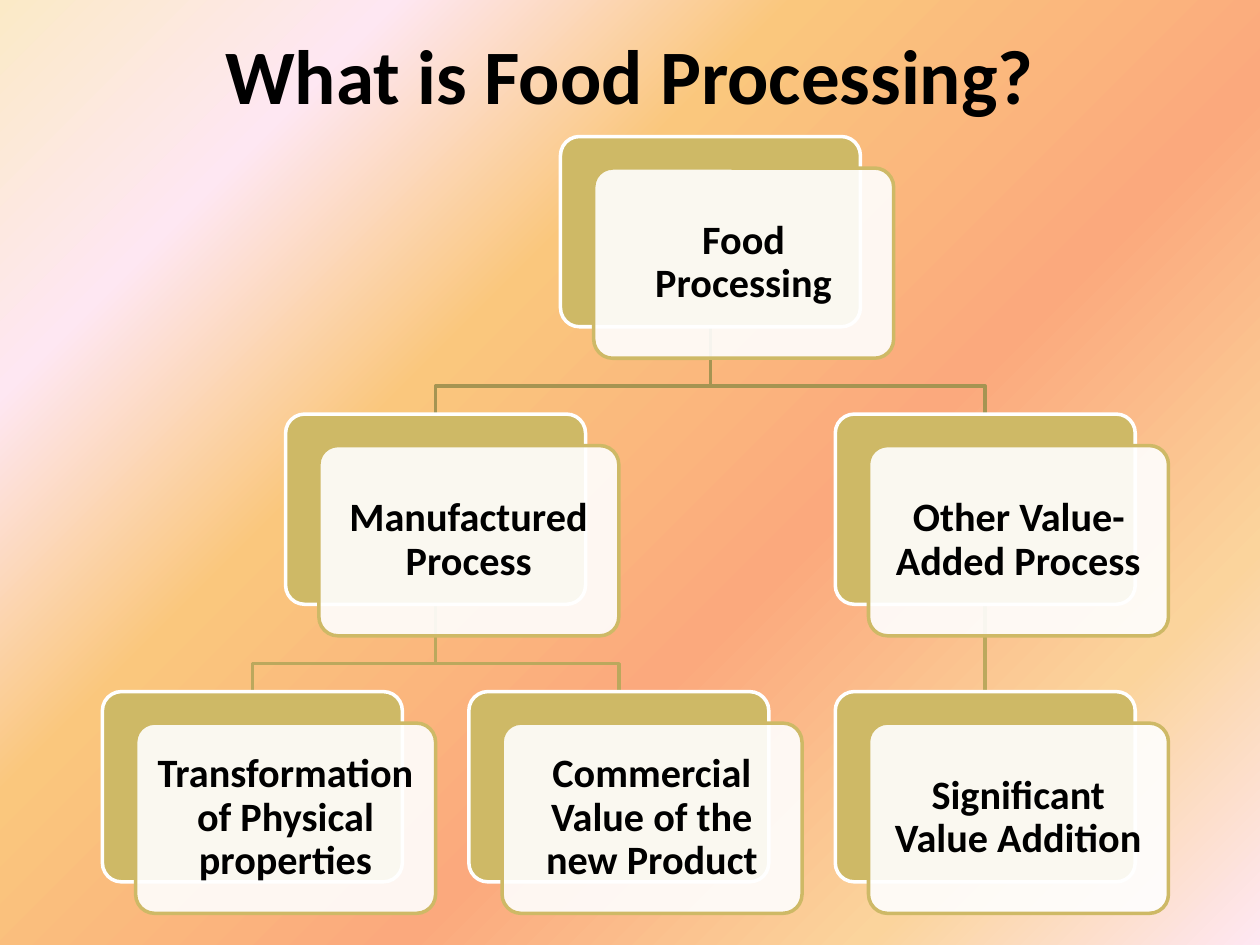
from lxml.etree import SubElement
from pptx import Presentation
from pptx.dml.color import RGBColor
from pptx.enum.shapes import MSO_CONNECTOR, MSO_SHAPE
from pptx.enum.text import MSO_ANCHOR, PP_ALIGN
from pptx.oxml import parse_xml
from pptx.oxml.ns import nsdecls, qn
from pptx.util import Pt

STOPS = [(0, "FBEAC7"), (18, "FEE7F2"), (36, "FAC77D"),
         (61, "FBA97D"), (82, "FBD49C"), (100, "FEE7F2")]
GOLD, WHITE, BLACK = "CEB966", "FFFFFF", "000000"
DARK, MID = "A59452", "BBA85D"

# Chart grid: card size, step between columns and rows, front card offset
WIDE, HIGH = 171.4, 108.7
COL, ROW = 209.4, 158.6
SHIFT = (19, 18)
BEND = 34  # drop from a card to the bend of its link

# Name: (column, row, text)
NODES = {
    "food": (1.25, 0, "Food Processing"),
    "made": (0.5, 1, "Manufactured Process"),
    "form": (0, 2, "Transformation of Physical properties"),
    "trade": (1, 2, "Commercial Value of the new Product"),
    "other": (2, 1, "Other Value-Added Process"),
    "gain": (2, 2, "Significant Value Addition"),
}
LINKS = [("food", "made", DARK), ("made", "form", MID), ("made", "trade", MID),
         ("food", "other", DARK), ("other", "gain", MID)]


def rgb(code):
    return RGBColor.from_string(code)


def paint(slide):
    """Diagonal gradient background."""
    stops = "".join(f'<a:gs pos="{pos * 1000}"><a:srgbClr val="{code}"/></a:gs>'
                    for pos, code in STOPS)
    back = parse_xml(
        f'<p:bg {nsdecls("p", "a")}><p:bgPr><a:gradFill rotWithShape="1">'
        f'<a:gsLst>{stops}</a:gsLst><a:lin ang="2700000" scaled="0"/>'
        '</a:gradFill><a:effectLst/></p:bgPr></p:bg>')
    slide.element.cSld.insert(0, back)


def write(shape, text, size, inset):
    frame = shape.text_frame
    frame.word_wrap = True
    frame.vertical_anchor = MSO_ANCHOR.MIDDLE
    for side in ("left", "top", "right", "bottom"):
        setattr(frame, f"margin_{side}", Pt(inset))
    para = frame.paragraphs[0]
    para.text = text
    para.alignment = PP_ALIGN.CENTER
    look = {"name": "Calibri", "size": Pt(size), "bold": True}
    for key, value in look.items():
        setattr(para.font, key, value)
    para.font.color.rgb = rgb(BLACK)
    return para


def title(slide, left, top, width, height):
    box = slide.shapes.add_textbox(Pt(left), Pt(top), Pt(width), Pt(height))
    write(box, "What is Food Processing?", 44, 4)


def card(slide, left, top, fill, line):
    shape = slide.shapes.add_shape(MSO_SHAPE.ROUNDED_RECTANGLE, Pt(left), Pt(top),
                                   Pt(WIDE), Pt(HIGH))
    shape.adjustments[0] = 0.1
    shape.shadow.inherit = False
    shape.fill.solid()
    shape.fill.fore_color.rgb = rgb(fill)
    shape.line.color.rgb = rgb(line)
    shape.line.width = Pt(2)
    return shape


def node(slide, left, top, text):
    """Gold card with a translucent text card in front; returns the gold one."""
    back = card(slide, left, top, GOLD, WHITE)
    front = card(slide, left + SHIFT[0], top + SHIFT[1], WHITE, GOLD)
    tint = front.fill._xPr.find(qn("a:solidFill"))[0]
    SubElement(tint, qn("a:alpha"), val="90000")
    write(front, text, 23, 7.2).line_spacing = 0.9
    return back


def link(slide, top, low, color):
    """Line from the bottom of one card to the top of another, behind all cards."""
    x, y = top.left + top.width // 2, top.top + top.height
    end = low.left + low.width // 2
    if x == end:
        line = slide.shapes.add_connector(MSO_CONNECTOR.STRAIGHT, x, y, end, low.top)
        line.begin_connect(top, 2)
        line.end_connect(low, 0)
        SubElement(line._element.spPr, qn("a:effectLst"))
    else:
        bend = y + Pt(BEND)
        pen = slide.shapes.build_freeform(x, y)
        pen.add_line_segments([(x, bend), (end, bend), (end, low.top)], close=False)
        line = pen.convert_to_shape()
        line.fill.background()
        line.shadow.inherit = False
    line.line.color.rgb = rgb(color)
    line.line.width = Pt(2)
    slide.shapes._spTree.insert(2, line._element)


def chart(slide, left, top):
    cards = {name: node(slide, left + col * COL, top + row * ROW, text)
             for name, (col, row, text) in NODES.items()}
    for start, end, color in LINKS:
        link(slide, cards[start], cards[end], color)


def main():
    deck = Presentation()
    deck.slide_width, deck.slide_height = Pt(720), Pt(540)
    slide = deck.slides.add_slide(deck.slide_layouts[6])
    paint(slide)
    title(slide, 36, 6, 648, 72)
    chart(slide, 58.5, 78)
    deck.save("out.pptx")


if __name__ == "__main__":
    main()
